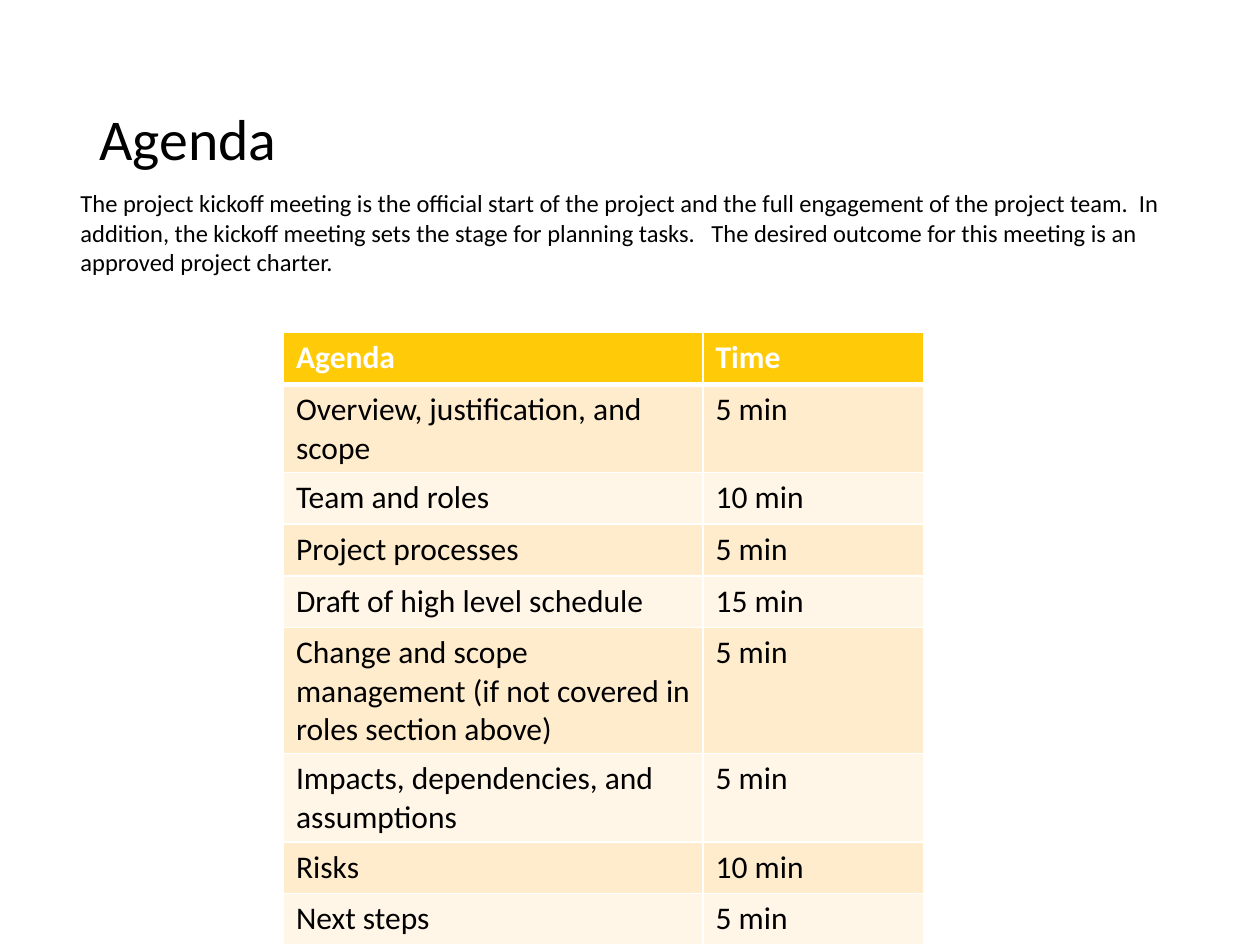
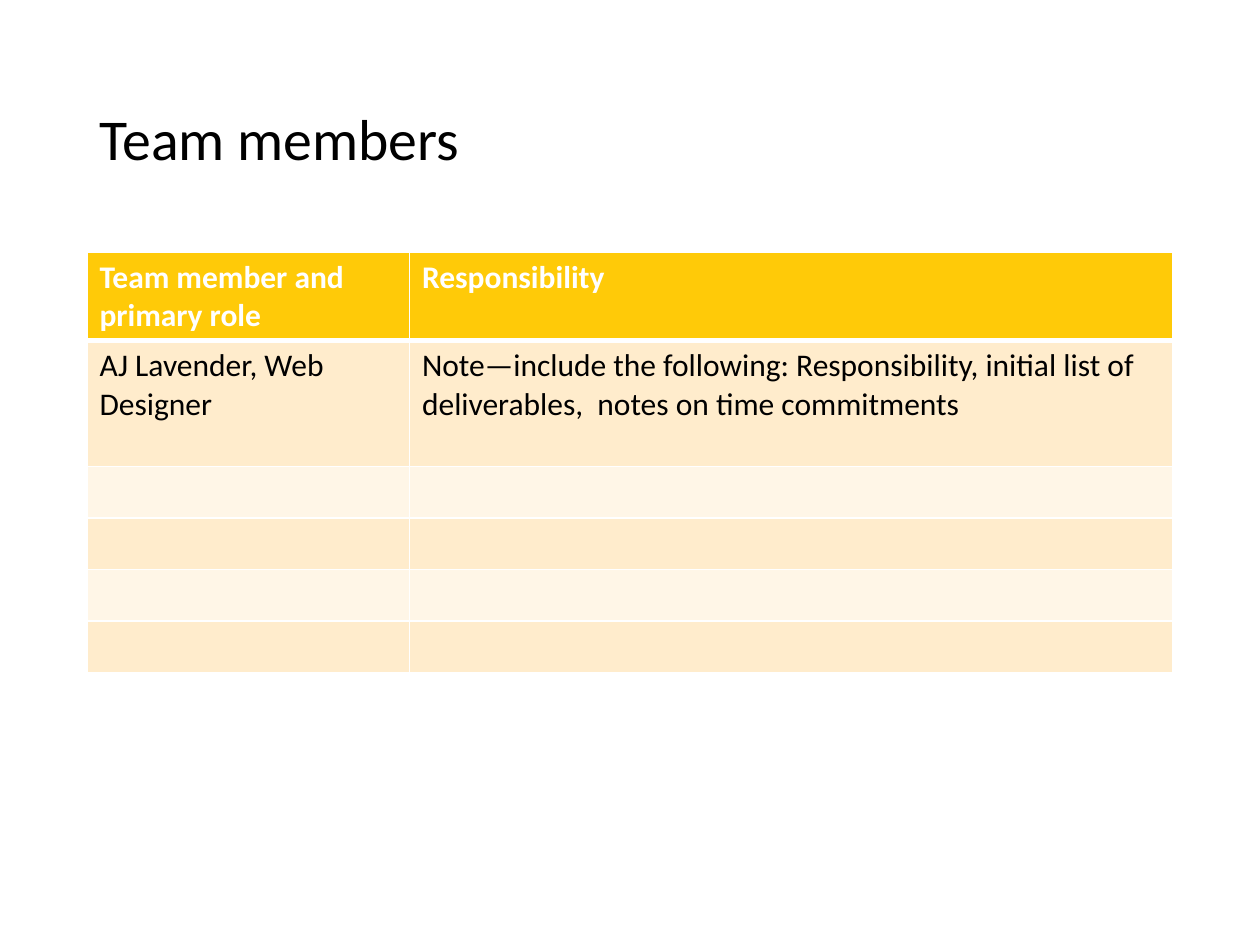
"""Build the agenda and team slides of a project kickoff deck."""
from lxml.etree import SubElement
from pptx import Presentation
from pptx.dml.color import RGBColor
from pptx.enum.text import MSO_ANCHOR
from pptx.oxml import parse_xml
from pptx.oxml.ns import nsdecls
from pptx.util import Inches, Pt

WHITE = RGBColor(0xFF, 0xFF, 0xFF)
BLACK = RGBColor(0, 0, 0)
GOLD = RGBColor(0xFF, 0xCA, 0x08)
BANDS = (RGBColor(0xFF, 0xEC, 0xCC), RGBColor(0xFF, 0xF6, 0xE7))

SLIDES = [
    {
        "title": "Agenda",
        "intro": "The project kickoff meeting is the official start of the project and "
                 "the full engagement of the project team.  In addition, the kickoff "
                 "meeting sets the stage for planning tasks.   The desired outcome for "
                 "this meeting is an approved project charter.",
        "corner": (2.25, 2.64),
        "columns": (3.33, 1.75),
        "rows": [
            ("Agenda", "Time"),
            ("Overview, justification, and scope", "5 min"),
            ("Team and roles", "10 min"),
            ("Project processes", "5 min"),
            ("Draft of high level schedule", "15 min"),
            ("Change and scope management (if not covered in roles section above)", "5 min"),
            ("Impacts, dependencies, and assumptions", "5 min"),
            ("Risks", "10 min"),
            ("Next steps", "5 min"),
        ],
    },
    {
        "title": "Team members",
        "corner": (0.69, 2),
        "columns": (2.56, 6.06),
        "rows": [
            ("Team member and primary role", "Responsibility"),
            ("AJ Lavender, Web Designer",
             "Note—include the following: Responsibility, initial list of deliverables,"
             "  notes on time commitments"),
            *[("", "")] * 4,
        ],
        "tall": {1: 1.0},
    },
]

TITLE_BOX = (0.69, 0.4, 8.62, 1.45)
INTRO_BOX = (0.54, 1.44, 8.92, 0.81)
ROW_HEIGHT = 0.41
TITLE = {"size": Pt(33), "color": BLACK}
INTRO = {"size": Pt(14), "color": BLACK}
HEADER = {"size": Pt(18), "color": WHITE, "bold": True}
BODY = {"size": Pt(18), "color": BLACK, "bold": False}


def write(p, text, style):
    r = p.add_run()
    r.text = text
    for name, value in {"name": "Calibri", **style}.items():
        if name == "color":
            r.font.color.rgb = value
        else:
            setattr(r.font, name, value)


def add_text(s, box, text, style, spacing=1.0):
    tf = s.shapes.add_textbox(*map(Inches, box)).text_frame
    tf.word_wrap = True
    tf.vertical_anchor = MSO_ANCHOR.MIDDLE
    tf.paragraphs[0].line_spacing = spacing
    write(tf.paragraphs[0], text, style)


def add_borders(cell, widths):
    tc_pr = cell._tc.get_or_add_tcPr()
    for i, (side, width) in enumerate(widths.items()):
        line = parse_xml(f'<a:ln{side} {nsdecls("a")} w="{Pt(width)}"/>')
        fill = SubElement(line, f"{{{line.nsmap['a']}}}solidFill")
        SubElement(fill, f"{{{line.nsmap['a']}}}srgbClr", val=str(WHITE))
        tc_pr.insert(i, line)


def add_grid(s, corner, columns, rows, tall):
    heights = [tall.get(i, ROW_HEIGHT) for i in range(len(rows))]
    box = (*corner, sum(columns), sum(heights))
    table = s.shapes.add_table(len(rows), len(columns), *map(Inches, box)).table
    table.horz_banding = False
    for column, width in zip(table.columns, columns):
        column.width = Inches(width)
    for i, texts in enumerate(rows):
        table.rows[i].height = Inches(heights[i])
        for j, text in enumerate(texts):
            cell = table.cell(i, j)
            cell.fill.solid()
            cell.fill.fore_color.rgb = BANDS[(i - 1) % 2] if i else GOLD
            add_borders(cell, {"L": 1, "R": 1, "T": 3 if i == 1 else 1, "B": 1 if i else 3})
            if text:
                write(cell.text_frame.paragraphs[0], text, BODY if i else HEADER)


def main():
    prs = Presentation()
    prs.slide_width, prs.slide_height = Inches(10), Inches(7.5)
    for content in SLIDES:
        s = prs.slides.add_slide(prs.slide_layouts[6])
        add_text(s, TITLE_BOX, content["title"], TITLE, 0.9)
        if "intro" in content:
            add_text(s, INTRO_BOX, content["intro"], INTRO)
        add_grid(s, content["corner"], content["columns"], content["rows"],
                 content.get("tall", {}))
    prs.save("out.pptx")


if __name__ == "__main__":
    main()
